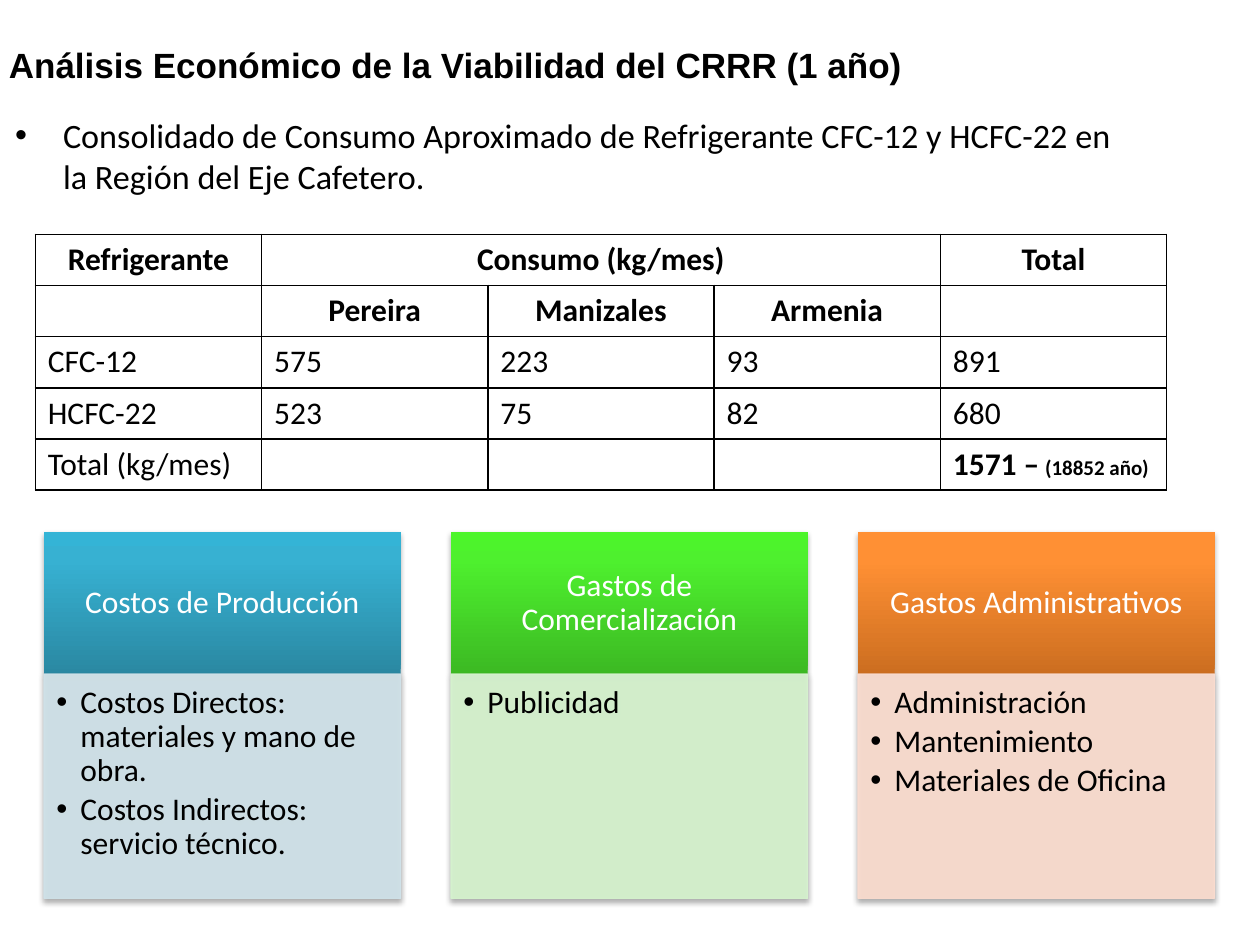
"""Build the slide on the economic viability of the CRRR."""
from dataclasses import dataclass
from copy import deepcopy

from lxml.etree import SubElement
from pptx import Presentation
from pptx.dml.color import RGBColor
from pptx.enum.shapes import MSO_SHAPE as SHAPE
from pptx.enum.text import MSO_ANCHOR as ANCHOR, MSO_AUTO_SIZE as AUTO, PP_ALIGN as ALIGN
from pptx.oxml.ns import qn
from pptx.util import Inches, Pt


@dataclass(frozen=True)
class Theme:
    heading_font: str = "Arial"
    font: str = "Calibri"
    black: str = "000000"
    white: str = "FFFFFF"
    title: float = 20
    lead: float = 19.5
    text: float = 18
    gap: float = 14
    note: float = 12


THEME = Theme()

HEADERS = {(0, 0): "Refrigerante", (0, 1): "Consumo (kg/mes)", (0, 4): "Total",
           (1, 1): "Pereira", (1, 2): "Manizales", (1, 3): "Armenia"}
ROWS = [["CFC-12", "575", "223", "93", "891"],
        ["HCFC-22", "523", "75", "82", "680"],
        ["Total (kg/mes)"]]
TOTAL = [("1571 –", THEME.text), (" ", THEME.gap), ("(18852 año)", THEME.note)]

CARDS = [
    ("Costos de Producción", ("2A88A2", "37B1D2", "34B4D6"), "D0E3EA",
     ["Costos Directos: materiales y mano de obra.", "Costos Indirectos: servicio técnico."]),
    ("Gastos de Comercialización", ("3CB923", "4EF02E", "4CF52A"), "D6F4CE", ["Publicidad"]),
    ("Gastos Administrativos", ("CC6E20", "FF9034", "FF9136"), "FCDDCF",
     ["Administración", "Mantenimiento", "Materiales de Oficina"]),
]


def rgb(color):
    return RGBColor.from_string(color)


def add_text(p, text, size=THEME.text, color=THEME.black, font=THEME.font, bold=False,
             align=ALIGN.LEFT, indent=None, spacing=1.0, after=0):
    if indent:
        pPr = p._p.get_or_add_pPr()
        pPr.set("marL", str(Inches(indent)))
        pPr.set("indent", str(-Inches(indent)))
        SubElement(pPr, qn("a:buFont"), typeface="Arial")
        SubElement(pPr, qn("a:buChar"), char="•")
    p.alignment, p.line_spacing = align, spacing
    p.space_before, p.space_after = Pt(0), Pt(after)
    r = p.add_run()
    r.text = text
    r.font.name, r.font.size, r.font.bold = font, Pt(size), bold
    r.font.color.rgb = rgb(color)


def set_frame(tf, anchor, left=0.1, top=0.05, right=0.1, bottom=0.05):
    tf.word_wrap, tf.auto_size, tf.vertical_anchor = True, AUTO.NONE, anchor
    tf.margin_left, tf.margin_top = Inches(left), Inches(top)
    tf.margin_right, tf.margin_bottom = Inches(right), Inches(bottom)


def place(sp, left, top, width, height):
    sp.left, sp.top = Inches(left), Inches(top)
    sp.width, sp.height = Inches(width), Inches(height)


def fill_placeholders(slide):
    title, body = slide.placeholders
    place(title, -0.03, 0, 9, 1.34)
    set_frame(title.text_frame, ANCHOR.MIDDLE, bottom=0.36)
    add_text(title.text_frame.paragraphs[0], "Análisis Económico de la Viabilidad del CRRR (1 año)",
             size=THEME.title, font=THEME.heading_font, bold=True)
    place(body, 0.02, 0.76, 9, 0.94)
    set_frame(body.text_frame, ANCHOR.MIDDLE)
    add_text(body.text_frame.paragraphs[0],
             "Consolidado de Consumo Aproximado de Refrigerante CFC-12 y HCFC-22 "
             "en la Región del Eje Cafetero.", size=THEME.lead, indent=0.38)


def add_borders(cell):
    tcPr = cell._tc.get_or_add_tcPr()
    for side in ("lnL", "lnR", "lnT", "lnB"):
        ln = SubElement(tcPr, qn(f"a:{side}"), w=str(Pt(1)))
        fill = SubElement(ln, qn("a:solidFill"))
        SubElement(fill, qn("a:srgbClr"), val=THEME.black)


def add_consumption_table(slide):
    table = slide.shapes.add_table(5, 5, Inches(0.28), Inches(1.86),
                                   Inches(8.98), Inches(2.03)).table
    table.first_row = table.horz_banding = False
    for cell in table.iter_cells():
        add_borders(cell)
        cell.fill.background()
    table.cell(0, 1).merge(table.cell(0, 3))
    for (row, col), text in HEADERS.items():
        add_text(table.cell(row, col).text_frame.paragraphs[0], text,
                 bold=True, align=ALIGN.CENTER)
    for row, values in enumerate(ROWS, start=2):
        for col, text in enumerate(values):
            add_text(table.cell(row, col).text_frame.paragraphs[0], text)
    for text, size in TOTAL:
        add_text(table.cell(4, 4).text_frame.paragraphs[0], text, size=size, bold=True)


def add_box(slide, left, top, width, height):
    sp = slide.shapes.add_shape(SHAPE.RECTANGLE, Inches(left), Inches(top),
                                Inches(width), Inches(height))
    sp.shadow.inherit = False
    effects = sp._element.spPr.find(qn("a:effectLst"))
    shadow = SubElement(effects, qn("a:outerShdw"), blurRad=str(Pt(3.1)), dist=str(Pt(1.8)),
                        dir="5400000", rotWithShape="0")
    set_alpha(SubElement(shadow, qn("a:srgbClr"), val=THEME.black), 35)
    return sp


def set_alpha(color, percent):
    SubElement(color, qn("a:alpha"), val=str(percent * 1000))


def set_gradient(sp, colors):
    sp.fill.gradient()
    sp.fill.gradient_angle = 90
    stops = sp._element.spPr.find(".//" + qn("a:gsLst"))
    stops.append(deepcopy(stops[-1]))
    for stop, position, color in zip(sp.fill.gradient_stops, (0, 0.8, 1), colors):
        stop.position, stop.color.rgb = position, rgb(color)


def add_card(slide, left, heading, gradient, tint, items):
    head = add_box(slide, left, 4.22, 2.83, 1.13)
    set_gradient(head, gradient)
    head.line.fill.background()
    set_frame(head.text_frame, ANCHOR.MIDDLE, 0.14, 0.08, 0.14, 0.08)
    add_text(head.text_frame.paragraphs[0], heading, color=THEME.white,
             align=ALIGN.CENTER, spacing=0.9)

    body = add_box(slide, left, 5.35, 2.83, 1.78)
    body.line.width = Pt(0.75)
    for fill in (body.fill, body.line.fill):
        fill.solid()
        fill.fore_color.rgb = rgb(tint)
    for color in body._element.spPr.findall(".//" + qn("a:solidFill") + "/" + qn("a:srgbClr")):
        set_alpha(color, 90)
    tf = body.text_frame
    set_frame(tf, ANCHOR.TOP, 0.1, 0.1, 0.14, 0.16)
    for i, item in enumerate(items):
        p = tf.add_paragraph() if i else tf.paragraphs[0]
        add_text(p, item, indent=0.19, spacing=0.9, after=2.7)


def main():
    prs = Presentation()
    prs.slide_width, prs.slide_height = Inches(10), Inches(7.5)
    slide = prs.slides.add_slide(prs.slide_layouts[1])
    fill_placeholders(slide)
    add_consumption_table(slide)
    for i, card in enumerate(CARDS):
        add_card(slide, 0.35 + 3.23 * i, *card)
    prs.save("out.pptx")


if __name__ == "__main__":
    main()
